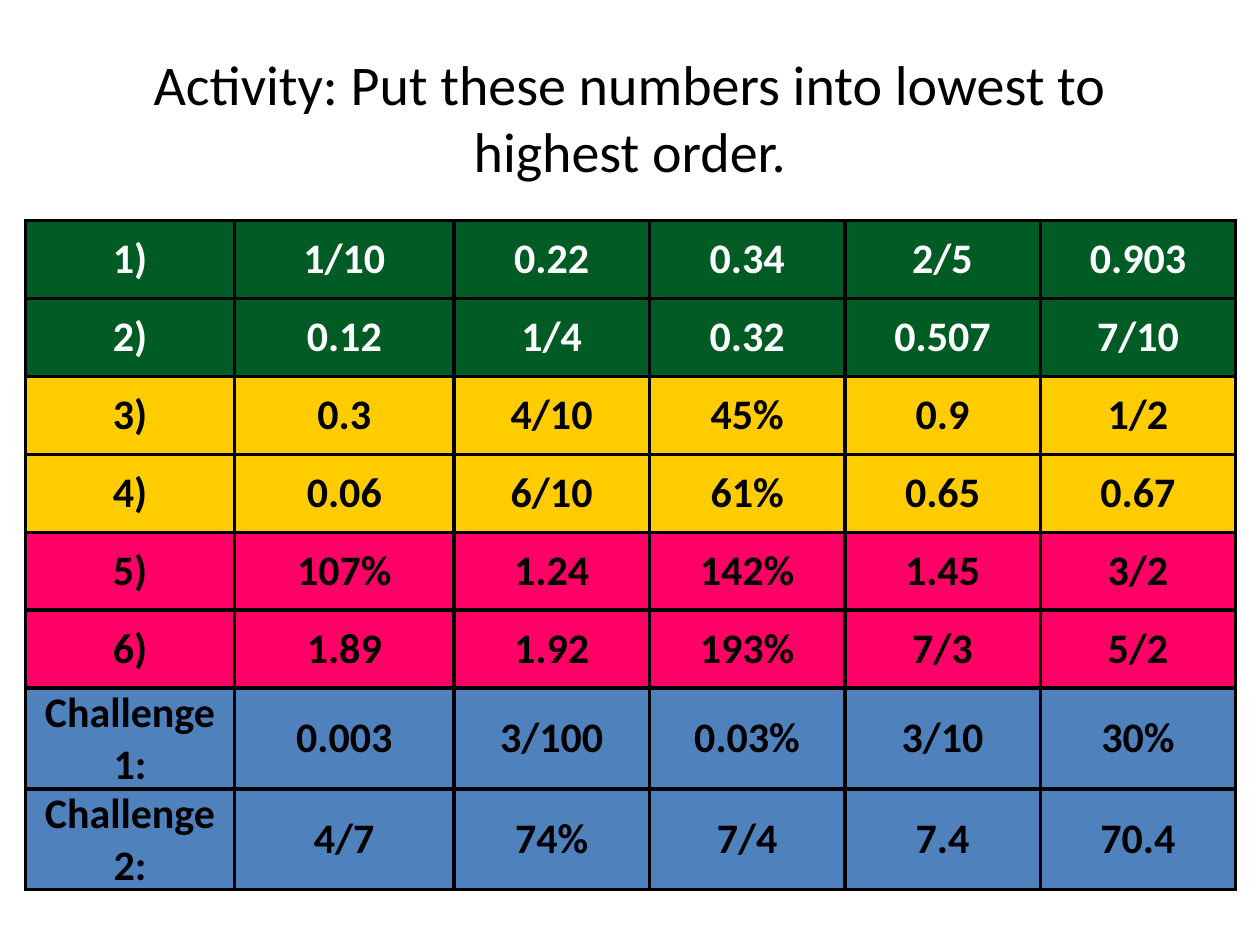
import pptx
import pptx.dml.color
import pptx.enum.text
import pptx.oxml
import pptx.oxml.ns
import pptx.util
from pptx.util import Cm

BLACK = pptx.dml.color.RGBColor(0x00, 0x00, 0x00)
WHITE = pptx.dml.color.RGBColor(0xFF, 0xFF, 0xFF)
GREEN = pptx.dml.color.RGBColor(0x00, 0x5C, 0x24)
YELLOW = pptx.dml.color.RGBColor(0xFF, 0xCC, 0x00)
PINK = pptx.dml.color.RGBColor(0xFF, 0x00, 0x66)
BLUE = pptx.dml.color.RGBColor(0x4F, 0x81, 0xBD)

TITLE = "Activity: Put these numbers into lowest to highest order."
COLUMN_WIDTHS = [Cm(4.22), Cm(4.42)] + [Cm(3.94)] * 4
NORMAL_HEIGHT = Cm(1.57)
CHALLENGE_HEIGHT = Cm(2.03)

# Each level: fill, text colour, row height, questions
LEVELS = [
    (GREEN, WHITE, NORMAL_HEIGHT, [
        ["1)", "1/10", "0.22", "0.34", "2/5", "0.903"],
        ["2)", "0.12", "1/4", "0.32", "0.507", "7/10"],
    ]),
    (YELLOW, BLACK, NORMAL_HEIGHT, [
        ["3)", "0.3", "4/10", "45%", "0.9", "1/2"],
        ["4)", "0.06", "6/10", "61%", "0.65", "0.67"],
    ]),
    (PINK, BLACK, NORMAL_HEIGHT, [
        ["5)", "107%", "1.24", "142%", "1.45", "3/2"],
        ["6)", "1.89", "1.92", "193%", "7/3", "5/2"],
    ]),
    (BLUE, BLACK, CHALLENGE_HEIGHT, [
        ["Challenge 1:", "0.003", "3/100", "0.03%", "3/10", "30%"],
        ["Challenge 2:", "4/7", "74%", "7/4", "7.4", "70.4"],
    ]),
]


def write_text(frame, text, size, color=BLACK, bold=False):
    frame.word_wrap = True
    paragraph = frame.paragraphs[0]
    paragraph.alignment = pptx.enum.text.PP_ALIGN.CENTER
    run = paragraph.add_run()
    run.text = text
    run.font.name = "Calibri"
    run.font.size = pptx.util.Pt(size)
    run.font.bold = bold
    run.font.color.rgb = color


def add_title(slide):
    title = slide.shapes.add_textbox(Cm(1.27), Cm(0.76), Cm(22.86), Cm(3.18))
    title.text_frame.vertical_anchor = pptx.enum.text.MSO_ANCHOR.MIDDLE
    write_text(title.text_frame, TITLE, size=32)


def add_borders(cell, color=BLACK, width=2.25):
    properties = cell._tc.get_or_add_tcPr()
    for position, side in enumerate(("lnL", "lnR", "lnT", "lnB")):
        border = pptx.oxml.parse_xml(
            f'<a:{side} {pptx.oxml.ns.nsdecls("a")} w="{pptx.util.Pt(width)}">'
            f'<a:solidFill><a:srgbClr val="{color}"/></a:solidFill></a:{side}>'
        )
        properties.insert(position, border)


def fill_cell(cell, text, fill, color):
    cell.margin_left = cell.margin_right = Cm(0)
    cell.margin_top = cell.margin_bottom = Cm(0)
    cell.vertical_anchor = pptx.enum.text.MSO_ANCHOR.MIDDLE
    cell.fill.solid()
    cell.fill.fore_color.rgb = fill
    add_borders(cell)
    write_text(cell.text_frame, text, size=24, color=color, bold=True)


def add_question_table(slide):
    questions = [
        (fill, color, height, numbers)
        for fill, color, height, rows in LEVELS
        for numbers in rows
    ]
    table = slide.shapes.add_table(
        len(questions), len(COLUMN_WIDTHS), Cm(0.51), Cm(4.45),
        sum(COLUMN_WIDTHS), sum(question[2] for question in questions),
    ).table
    table.first_row = table.horz_banding = False
    for column, width in zip(table.columns, COLUMN_WIDTHS):
        column.width = width
    for row, (fill, color, height, numbers) in zip(table.rows, questions):
        row.height = height
        for cell, number in zip(row.cells, numbers):
            fill_cell(cell, number, fill, color)


def main():
    presentation = pptx.Presentation()
    presentation.slide_width = Cm(25.4)
    presentation.slide_height = Cm(19.05)
    slide = presentation.slides.add_slide(presentation.slide_layouts[6])
    add_title(slide)
    add_question_table(slide)
    presentation.save("out.pptx")


if __name__ == "__main__":
    main()
